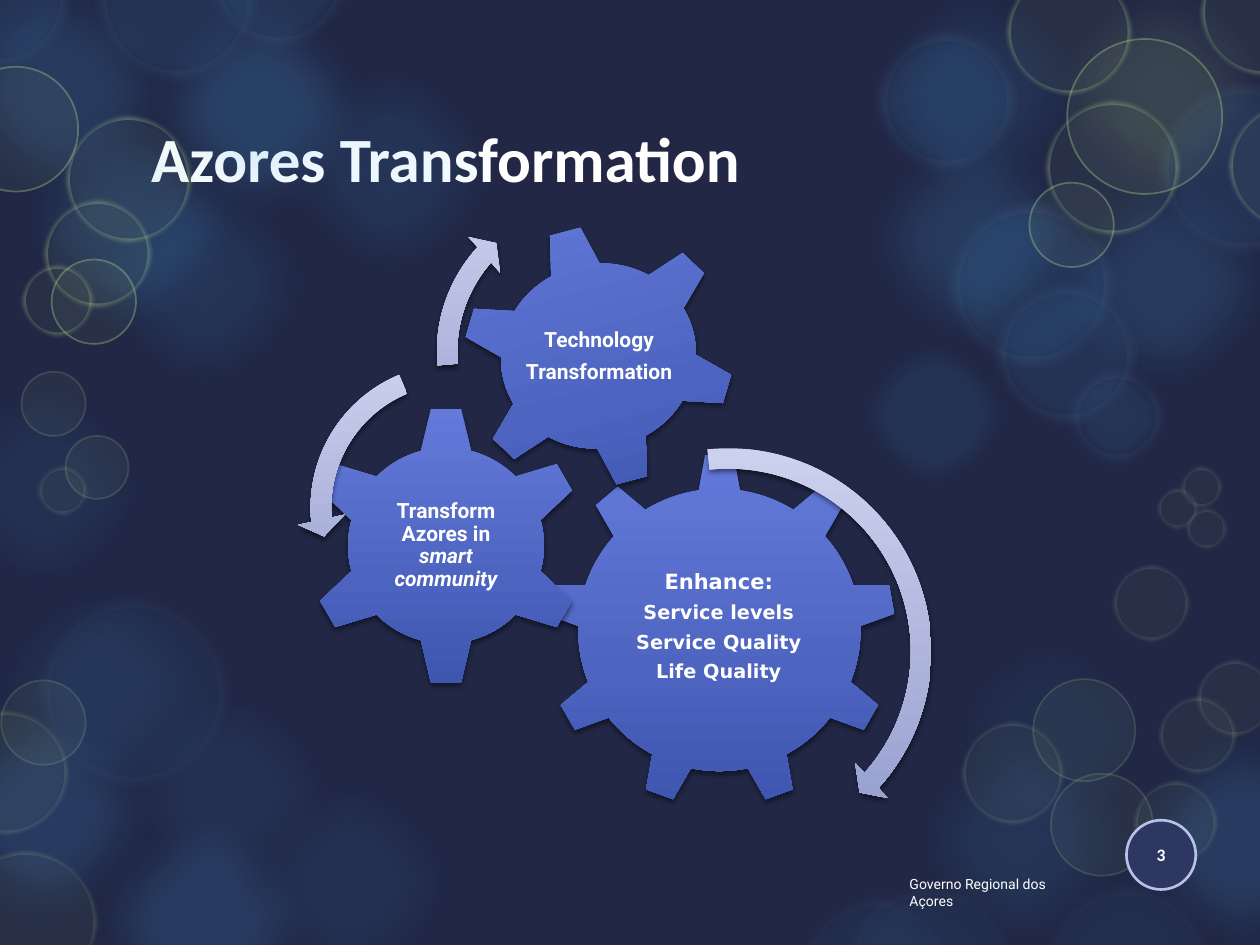
from lxml.etree import SubElement
from pptx import Presentation
from pptx.dml.color import RGBColor
from pptx.enum.shapes import MSO_SHAPE as Shape
from pptx.enum.text import MSO_ANCHOR as Anchor, PP_ALIGN as Align
from pptx.oxml.ns import qn
from pptx.util import Inches, Pt

rgb = RGBColor.from_string
BLUE, PALE_BLUE, GREEN, WHITE = "4FADF3", "D2EAFC", "CAF297", "FFFFFF"

presentation = Presentation()
presentation.slide_width, presentation.slide_height = Inches(10), Inches(7.5)
slide = presentation.slides.add_slide(presentation.slide_layouts[5])
slide.background.fill.solid()
slide.background.fill.fore_color.rgb = rgb("212745")

# All lengths count cells of a grid, ten square columns across the slide
cell = presentation.slide_width / 10


def grid(*lengths):
    return [round(length * cell) for length in lengths]


def write(paragraph, text, size, font, bold=True, italic=False):
    run = paragraph.add_run()
    run.text = text
    run.font.size, run.font.name = Pt(size), font
    run.font.bold, run.font.italic = bold, italic
    run.font.color.rgb = rgb(WHITE)


# Background bubbles: fill, fill alpha, line, line width, line alpha,
# soft edge, then left, top and diameter of each
bubbles = [
    (BLUE, 8, None, 0, 0, 25, [(-0.26, 4.42, 2.09), (0.77, 5.24, 2.09),
                               (1.73, 5.96, 2.09), (-0.7, 2.82, 2.09)]),
    (BLUE, 10, None, 0, 0, 25, [(0.57, 1.2, 2.09), (2.05, 0.31, 2.09),
                                (6.69, -0.29, 2.09), (7.06, 5.62, 2.09)]),
    (BLUE, 16, None, 0, 0, 25, [(0.57, 6.27, 2.09), (8.81, 5.62, 2.09),
                                (-0.69, 5.41, 2.09)]),
    (BLUE, 15, None, 0, 0, 25, [(-0.56, -0.33, 2.09), (0, 0.72, 2.09),
                                (8.2, 1.2, 2.09), (6.69, 0.86, 2.09)]),
    (BLUE, 20, None, 0, 0, 25, [(1.01, -0.18, 2.09)]),
    (BLUE, 5, None, 0, 0, 25, [(7.29, 4.77, 2.09)]),
    (GREEN, 10, None, 0, 0, 25, [(8.2, -0.33, 2.09)]),
    (BLUE, 10, None, 0, 0, 12, [(6.75, 2.62, 1.33)]),
    (BLUE, 10, PALE_BLUE, 14, 6, 10, [
        (9.18, 0.65, 1.37), (6.94, 0.23, 1.14), (7.52, 1.59, 1.33),
        (7.89, 2.24, 1.14), (8.47, 2.91, 0.79), (0.75, -0.65, 1.3),
        (1.64, -0.75, 1.14), (-0.57, -0.58, 1.14)]),
    (BLUE, 6, PALE_BLUE, 14, 4, 10, [
        (0.3, 4.73, 1.53), (6.32, 7.1, 1.25), (6.69, 7.01, 1.37),
        (8.28, 7.01, 1.34)]),
    (GREEN, 5, GREEN, 1, 15, 0, [
        (0.01, 5.4, 0.67), (8.34, 6.14, 0.81), (8.2, 5.39, 0.81),
        (0.17, 2.95, 0.51), (0.52, 3.46, 0.5)]),
    (GREEN, 5, GREEN, 5, 15, 3, [
        (-0.36, 6.75, 1.13), (-0.44, 5.64, 0.98), (7.63, 5.73, 0.81),
        (9, 6.2, 0.66), (8.83, 4.48, 0.61), (9.2, 5.53, 0.61),
        (9.5, 5.24, 0.6), (9.37, 3.7, 0.33), (9.18, 3.87, 0.33),
        (9.41, 4.03, 0.33), (0.3, 3.7, 0.39)]),
    (GREEN, 5, GREEN, 1, 30, 0, [
        (-0.37, 0.53, 0.99), (0.41, 2.06, 0.67), (8.47, 0.31, 1.23),
        (8.17, 1.45, 0.67)]),
    (GREEN, 5, GREEN, 5, 30, 3, [
        (0.52, 0.92, 1), (0.35, 1.59, 0.85), (0.17, 2.1, 0.57),
        (7.99, -0.24, 0.99), (9.53, -0.4, 1), (9.75, 0.82, 1),
        (8.3, 0.8, 1.06)]),
]
for fill, fill_alpha, line, width, line_alpha, soft, places in bubbles:
    for left, top, diameter in places:
        bubble = slide.shapes.add_shape(Shape.OVAL, *grid(left, top, diameter, diameter))
        bubble.shadow.inherit = False
        bubble.fill.solid()
        bubble.fill.fore_color.rgb = rgb(fill)
        if line:
            bubble.line.color.rgb = rgb(line)
            bubble.line.width = Pt(width)
        else:
            bubble.line.fill.background()
        properties = bubble.element.spPr
        for color, alpha in zip(properties.iter(qn("a:srgbClr")), (fill_alpha, line_alpha)):
            SubElement(color, qn("a:alpha"), val=str(alpha * 1000))
        if soft:
            SubElement(properties.find(qn("a:effectLst")), qn("a:softEdge"), rad=str(Pt(soft)))

# Footer
footer = slide.shapes.add_textbox(*grid(7.12, 6.9, 1.6, 0.24)).text_frame
footer.word_wrap = True
write(footer.paragraphs[0], "Governo Regional dos Açores", 8, "Roboto", bold=False)

# Title
title = slide.shapes.title
title.left, title.top, title.width, title.height = grid(1.1, 0.74, 7.79, 1.01)
title.text_frame.vertical_anchor = Anchor.MIDDLE
title.text_frame.paragraphs[0].alignment = Align.LEFT
write(title.text_frame.paragraphs[0], "Azores Transformation", 36, "Calibri")

# Gears and turning arrows: kind, box, rotation, adjustments in percent,
# label box, font, then paragraphs made of (text, size, italic) runs
gear_fill, arrow_fill = ("637ADA", "3F56B0"), ("CED3EF", "9098CA")
parts = [
    (Shape.GEAR_9, (4.31, 3.6, 2.8, 2.8), 0, (), (4.87, 4.26, 1.67, 1.44), "DejaVu Sans",
     [[("Enhance:", 12, False)], [("Service levels", 11, False)],
      [("Service Quality", 11, False)], [("Life Quality", 11, False)]]),
    (Shape.GEAR_6, (2.43, 3.22, 2.22, 2.22), 0, (), (2.99, 3.78, 1.1, 1.1), "Roboto",
     [[("Transform Azores in ", 12, False), ("smart community", 12, True)]]),
    (Shape.GEAR_6, (3.66, 1.78, 2.18, 2.09), -15, (), (4.15, 2.24, 1.21, 1.18), "Roboto",
     [[("Technology", 12, False)], [("Transformation", 12, False)]]),
    (Shape.CIRCULAR_ARROW, (4.06, 3.45, 3.44, 3.44), 0,
     (4.7, 299, 2522.3, 15848.2, 5.5), None, None, []),
    (Shape.LEFT_CIRCULAR_ARROW, (2.36, 2.78, 2.5, 2.5), 0,
     (6.5, 430, 10489.1, 14837.8, 7.5), None, None, []),
    (Shape.CIRCULAR_ARROW, (3.36, 1.45, 2.69, 2.69), 0,
     (6, 394.1, 13313.8, 10508.2, 7), None, None, []),
]
for kind, box, rotation, adjustments, label_box, font, lines in parts:
    part = slide.shapes.add_shape(kind, *grid(*box))
    part.rotation = rotation
    for index, percent in enumerate(adjustments):
        part.adjustments[index] = percent / 100
    part.fill.gradient()
    part.fill.gradient_angle = 270
    for stop, color in zip(part.fill.gradient_stops, arrow_fill if adjustments else gear_fill):
        stop.color.rgb = rgb(color)
    part.line.fill.background()
    part.shadow.inherit = False
    shadow = SubElement(part.element.spPr.find(qn("a:effectLst")), qn("a:outerShdw"),
                        blurRad=str(Pt(3)), dist=str(Pt(2)), dir="5400000", rotWithShape="0")
    SubElement(SubElement(shadow, qn("a:srgbClr"), val="000000"), qn("a:alpha"), val="45000")
    if not lines:
        continue
    label = slide.shapes.add_textbox(*grid(*label_box)).text_frame
    label.word_wrap = True
    label.vertical_anchor = Anchor.MIDDLE
    label.margin_left = label.margin_right = label.margin_top = label.margin_bottom = Inches(0.02)
    for index, runs in enumerate(lines):
        paragraph = label.add_paragraph() if index else label.paragraphs[0]
        paragraph.alignment = Align.CENTER
        paragraph.line_spacing = 0.9
        paragraph.space_after = Pt(5)
        for text, size, italic in runs:
            write(paragraph, text, size, font, italic=italic)

# Page number
badge = slide.shapes.add_shape(Shape.OVAL, *grid(8.94, 6.51, 0.55, 0.55))
badge.shadow.inherit = False
badge.fill.solid()
badge.fill.fore_color.rgb = rgb("2E3761")
badge.line.color.rgb = rgb("B8C2E9")
badge.line.width = Pt(1.5)
badge.text_frame.vertical_anchor = Anchor.MIDDLE
badge.text_frame.paragraphs[0].alignment = Align.CENTER
write(badge.text_frame.paragraphs[0], "3", 10, "Calibri")

presentation.save("out.pptx")
